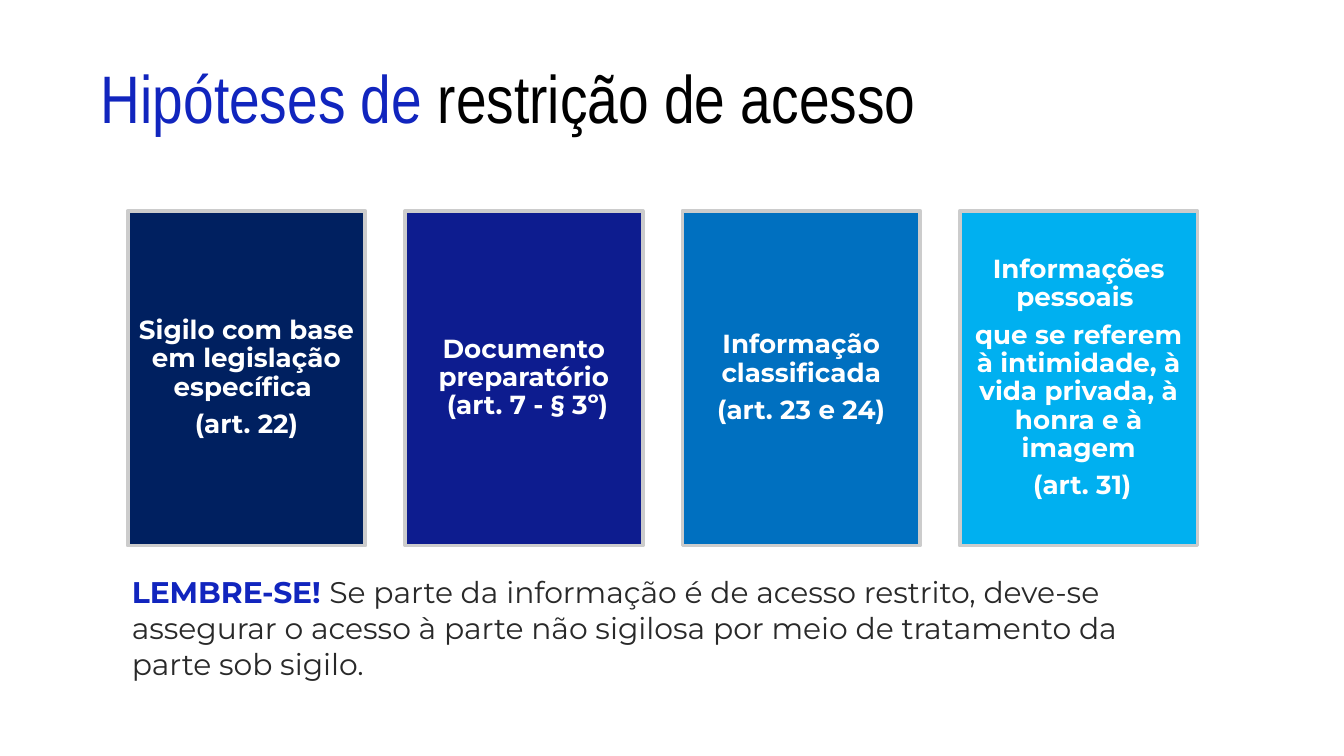
from pptx import Presentation
from pptx.dml.color import RGBColor
from pptx.enum.shapes import MSO_SHAPE
from pptx.enum.text import MSO_ANCHOR, PP_ALIGN
from pptx.util import Pt

BLUE = RGBColor(0x11, 0x25, 0xBE)
BLACK = RGBColor(0, 0, 0)
WHITE = RGBColor(0xFF, 0xFF, 0xFF)
BORDER_GRAY = RGBColor(0xCC, 0xCC, 0xCC)
DARK_GRAY = RGBColor(0x29, 0x29, 0x29)
NAVY = RGBColor(0x00, 0x20, 0x60)
INDIGO = RGBColor(0x0D, 0x1C, 0x8F)
MEDIUM_BLUE = RGBColor(0x00, 0x70, 0xC0)
SKY_BLUE = RGBColor(0x00, 0xB0, 0xF0)

TITLE = [
    ("Hipóteses de ", BLUE, False),
    ("restrição de acesso", BLACK, False),
]
CARDS = [
    (NAVY, ["Sigilo com base em legislação específica ", "(art. 22)"]),
    (INDIGO, ["Documento preparatório\n (art. 7 - § 3º)"]),
    (MEDIUM_BLUE, ["Informação classificada", "(art. 23 e 24)"]),
    (SKY_BLUE, [
        "Informações pessoais ",
        "que se referem à intimidade, à vida privada, à honra e à imagem",
        " (art. 31)",
    ]),
]
REMINDER = [
    ("LEMBRE-SE! ", BLUE, True),
    ("Se parte da informação é de acesso restrito, deve-se assegurar o acesso "
     "à parte não sigilosa por meio de tratamento da parte sob sigilo.", DARK_GRAY, False),
]

CARD_LEFT, CARD_TOP = 68.4, 113
CARD_WIDTH, CARD_HEIGHT = 127.4, 179.3
CARD_GAP = 21.2


def set_attributes(target, values):
    for name, value in values.items():
        setattr(target, name, value)


def set_font(run, name, size, color, bold):
    set_attributes(run.font, {"name": name, "size": Pt(size), "bold": bold})
    run.font.color.rgb = color


def set_frame(frame, horizontal, vertical, anchor):
    set_attributes(frame, {
        "word_wrap": True,
        "vertical_anchor": anchor,
        "margin_left": Pt(horizontal),
        "margin_right": Pt(horizontal),
        "margin_top": Pt(vertical),
        "margin_bottom": Pt(vertical),
    })


def add_text(slide, box, margins, runs, font_name, size):
    frame = slide.shapes.add_textbox(*map(Pt, box)).text_frame
    set_frame(frame, *margins, MSO_ANCHOR.TOP)
    paragraph = frame.paragraphs[0]
    for text, color, bold in runs:
        run = paragraph.add_run()
        run.text = text
        set_font(run, font_name, size, color, bold)
    return paragraph


def add_card(slide, left, color, texts):
    shape = slide.shapes.add_shape(
        MSO_SHAPE.RECTANGLE, Pt(left), Pt(CARD_TOP), Pt(CARD_WIDTH), Pt(CARD_HEIGHT))
    shape.shadow.inherit = False
    shape.fill.solid()
    shape.fill.fore_color.rgb = color
    shape.line.color.rgb = BORDER_GRAY
    shape.line.width = Pt(2)
    frame = shape.text_frame
    set_frame(frame, 5, 5, MSO_ANCHOR.MIDDLE)
    for index, text in enumerate(texts):
        paragraph = frame.add_paragraph() if index else frame.paragraphs[0]
        paragraph.text = text.replace("\n", "\v")
        set_attributes(paragraph, {
            "alignment": PP_ALIGN.CENTER,
            "line_spacing": 0.9,
            "space_after": Pt(5),
        })
        for run in paragraph.runs:
            set_font(run, "Montserrat", 14, WHITE, True)


def main():
    presentation = Presentation()
    presentation.slide_width, presentation.slide_height = Pt(720), Pt(405)
    slide = presentation.slides.add_slide(presentation.slide_layouts[6])

    title = add_text(slide, (54, 22.3, 624, 50), (0, 0), TITLE, "Arial Narrow", 36)
    title.line_spacing = Pt(51)
    for index, (color, texts) in enumerate(CARDS):
        add_card(slide, CARD_LEFT + index * (CARD_WIDTH + CARD_GAP), color, texts)
    add_text(slide, (67, 305.3, 574.6, 81.4), (3.6, 2.2), REMINDER, "Montserrat", 16)

    presentation.save("out.pptx")


if __name__ == "__main__":
    main()
